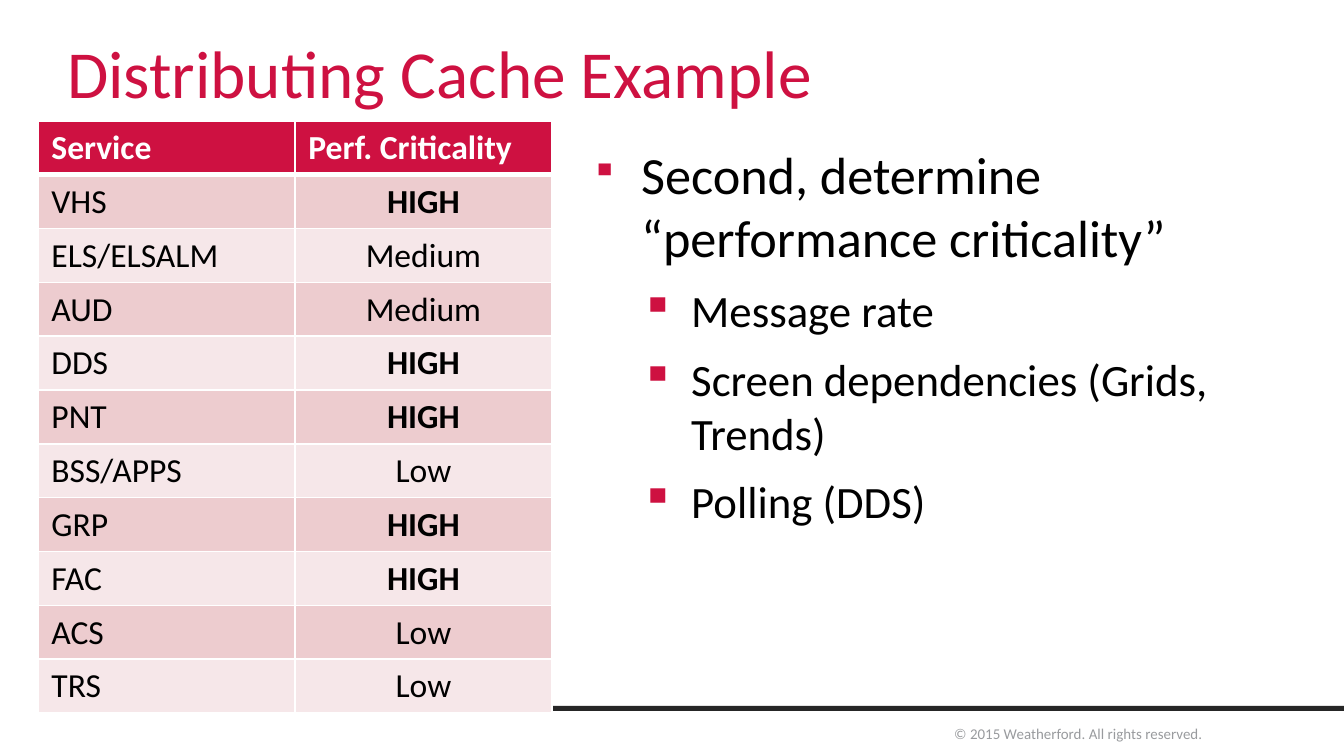
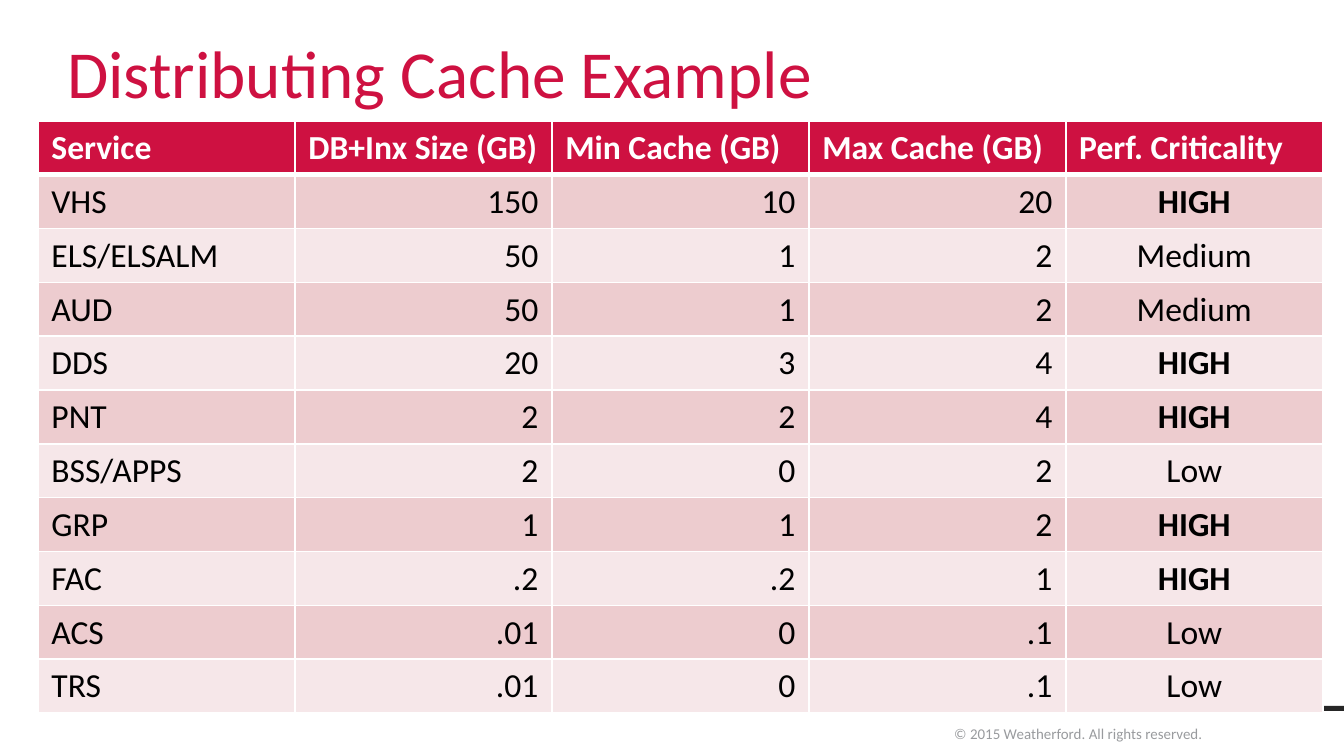
from lxml.etree import SubElement
from pptx import Presentation
from pptx.dml.color import RGBColor
from pptx.enum.shapes import MSO_SHAPE as Shape
from pptx.enum.text import MSO_ANCHOR as Anchor, PP_ALIGN as Align
from pptx.oxml.ns import qn
from pptx.util import Emu, Pt

FONT = "Calibri"
RED = RGBColor(0xCE, 0x11, 0x41)
PINK = RGBColor(0xED, 0xCC, 0xCF)
PALE = RGBColor(0xF6, 0xE7, 0xE9)
CHARCOAL = RGBColor(0x26, 0x26, 0x26)
GREY = RGBColor(0x99, 0x9B, 0x9E)
BLACK = RGBColor(0, 0, 0)
WHITE = RGBColor(0xFF, 0xFF, 0xFF)

PAGE_WIDTH, PAGE_HEIGHT = 1344, 756
TITLE_BOX = (54, 31, 1142, 91)
RULE_BOX = (403, 706, 941, 5)
FOOTER_BOX = (941, 718, 278, 32)
BODY_BOX = (578, 136, 712, 546)
TABLE_CORNER = (38, 121)
COLUMN_WIDTH, ROW_HEIGHT = 257, 53
BULLET_INDENT = 50

TITLE = "Distributing Cache Example"
FOOTER = "© 2015 Weatherford. All rights reserved."
SERVICES = [
    ("Service", "DB+Inx Size (GB)", "Min Cache (GB)", "Max Cache (GB)", "Perf. Criticality"),
    ("VHS", "150", "10", "20", "HIGH"),
    ("ELS/ELSALM", "50", "1", "2", "Medium"),
    ("AUD", "50", "1", "2", "Medium"),
    ("DDS", "20", "3", "4", "HIGH"),
    ("PNT", "2", "2", "4", "HIGH"),
    ("BSS/APPS", "2", "0", "2", "Low"),
    ("GRP", "1", "1", "2", "HIGH"),
    ("FAC", ".2", ".2", "1", "HIGH"),
    ("ACS", ".01", "0", ".1", "Low"),
    ("TRS", ".01", "0", ".1", "Low"),
]
CRITERIA = [
    (0, "Second, determine “performance criticality”"),
    (1, "Message rate"),
    (1, "Screen dependencies (Grids, Trends)"),
    (1, "Polling (DDS)"),
]


def px(length):
    """Turn pixels into EMU."""
    return Emu(round(length * 914400 / 134.4))


def set_font(para, size, color, bold=False):
    """Set the font of a whole paragraph."""
    font = para.font
    font.name, font.size, font.bold = FONT, Pt(size), bold
    font.color.rgb = color


def add_text_frame(page, box, wrap=True):
    """Add a text box and return its frame."""
    frame = page.shapes.add_textbox(*map(px, box)).text_frame
    frame.word_wrap = wrap
    return frame


def add_title(page, box):
    """Place the slide title."""
    frame = add_text_frame(page, box)
    frame.vertical_anchor = Anchor.MIDDLE
    para = frame.paragraphs[0]
    para.text = TITLE
    para.line_spacing = 0.9
    set_font(para, 36, RED)


def add_footer(page, rule_box, text_box):
    """Place the dark rule and the copyright line."""
    rule = page.shapes.add_shape(Shape.RECTANGLE, *map(px, rule_box))
    rule.shadow.inherit = False
    rule.fill.solid()
    rule.fill.fore_color.rgb = CHARCOAL
    rule.line.fill.background()
    para = add_text_frame(page, text_box, wrap=False).paragraphs[0]
    para.text = FOOTER
    set_font(para, 8, GREY)


def add_bullet(para, level):
    """Give a paragraph a hanging red square."""
    para.level = level
    properties = para._p.get_or_add_pPr()
    properties.set("marL", str(px(BULLET_INDENT * (level + 1))))
    properties.set("indent", str(-px(BULLET_INDENT)))
    color = SubElement(properties, qn("a:buClr"))
    SubElement(color, qn("a:srgbClr"), val=str(RED))
    SubElement(properties, qn("a:buSzPct"), val="100000" if level else "70000")
    SubElement(properties, qn("a:buChar"), char="▪")


def add_criteria(page, box):
    """Place the bulleted criteria."""
    frame = add_text_frame(page, box)
    for index, (level, text) in enumerate(CRITERIA):
        para = frame.add_paragraph() if index else frame.paragraphs[0]
        para.text = text
        add_bullet(para, level)
        if index:
            para.space_before = Pt(8)
        set_font(para, 24 if level else 28, BLACK)


def add_borders(cell, bottom_points):
    """Draw white borders round a cell."""
    properties = cell._tc.get_or_add_tcPr()
    for side, points in (("L", 1), ("R", 1), ("T", 1), ("B", bottom_points)):
        line = SubElement(properties, qn(f"a:ln{side}"), w=str(Pt(points)))
        fill = SubElement(line, qn("a:solidFill"))
        SubElement(fill, qn("a:srgbClr"), val=str(WHITE))


def add_service_table(page, corner, columns):
    """Place the chosen columns of the service table."""
    size = (COLUMN_WIDTH * len(columns), ROW_HEIGHT * len(SERVICES))
    table = page.shapes.add_table(
        len(SERVICES), len(columns), *map(px, corner + size)).table
    for column in table.columns:
        column.width = px(COLUMN_WIDTH)
    last = len(SERVICES[0]) - 1
    for row, service in enumerate(SERVICES):
        table.rows[row].height = px(ROW_HEIGHT)
        header = row == 0
        for position, column in enumerate(columns):
            cell = table.cell(row, position)
            add_borders(cell, 3 if header or row == 0 else 1)
            cell.fill.solid()
            cell.fill.fore_color.rgb = RED if header else (PALE, PINK)[row % 2]
            para = cell.text_frame.paragraphs[0]
            para.text = service[column]
            if not header and column:
                para.alignment = Align.CENTER if column == last else Align.RIGHT
            set_font(para, 18, WHITE if header else BLACK,
                     header or service[column] == "HIGH")


def add_page(deck):
    """Add a slide with the shared title and footer."""
    page = deck.slides.add_slide(deck.slide_layouts[6])
    add_footer(page, RULE_BOX, FOOTER_BOX)
    add_title(page, TITLE_BOX)
    return page


def build_criticality(deck):
    """Build the slide on performance criticality."""
    page = add_page(deck)
    add_criteria(page, BODY_BOX)
    add_service_table(page, TABLE_CORNER, (0, 4))


def build_cache_sizes(deck):
    """Build the slide with the full table."""
    add_service_table(add_page(deck), TABLE_CORNER, range(5))


def main():
    """Build and save the deck."""
    deck = Presentation()
    deck.slide_width, deck.slide_height = px(PAGE_WIDTH), px(PAGE_HEIGHT)
    build_criticality(deck)
    build_cache_sizes(deck)
    deck.save("out.pptx")


if __name__ == "__main__":
    main()
